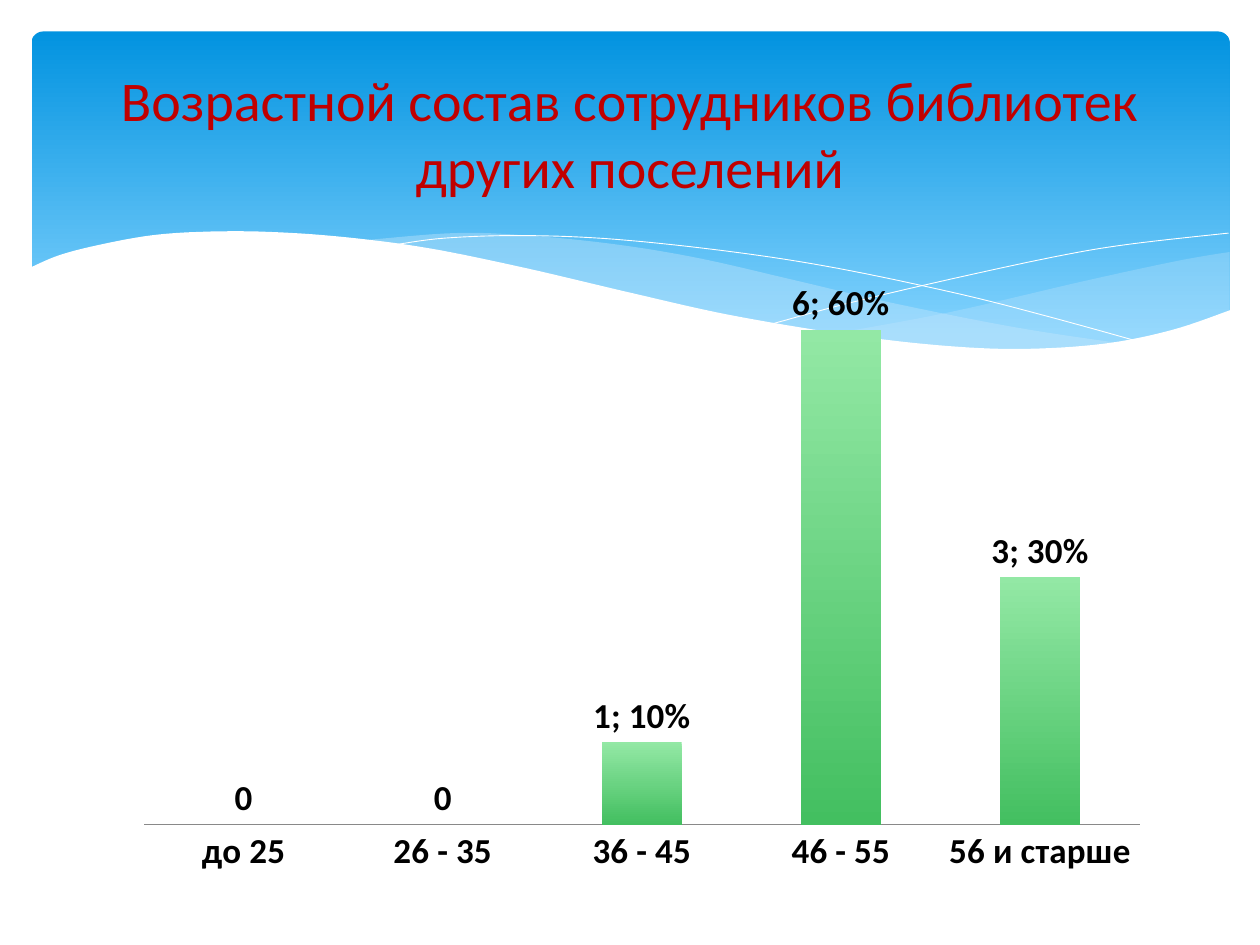
from itertools import chain
from lxml import etree
from pptx import Presentation
from pptx import util as u
from pptx.chart.data import CategoryChartData
from pptx.dml.color import RGBColor
from pptx.enum import chart as charts, shapes, text
from pptx.oxml import parse_xml
from pptx.oxml.ns import nsdecls, qn

THEME = dict(
    font="Calibri", title="C00000", ink="000000", axis="898989", paper="FFFFFF", mist="C6E7FC",
    sky=("0293E0", "83D3FE"), bars=("93E8A5", "43BF60"),
    title_size=32, label_size=20, chart_size=18, hairline=0.5,
)

deck = Presentation()
deck.slide_width, deck.slide_height = u.Inches(10), u.Inches(7.5)
col, row = deck.slide_width / 10, deck.slide_height / 7.5
slide = deck.slides.add_slide(deck.slide_layouts[6])


def write(frame, content, size, color, bold=False):
    paragraph = frame.paragraphs[0]
    paragraph.alignment = text.PP_ALIGN.CENTER
    run = paragraph.add_run()
    run.text = content
    run.font.name, run.font.size, run.font.bold = THEME["font"], u.Pt(size), bold
    run.font.color.rgb = RGBColor.from_string(color)


def wave(*edges, fill=None, alpha=100):
    outline = []
    for edge in edges:
        ends = [edge[0], *edge, edge[-1]]
        for a, b, c, d in zip(ends, ends[1:], ends[2:], ends[3:]):
            for t in (step / 8 for step in range(8)):
                outline.append([
                    b[i] + t * (c[i] - a[i]) / 2
                    + t ** 2 * (2 * a[i] - 5 * b[i] + 4 * c[i] - d[i]) / 2
                    + t ** 3 * (3 * b[i] - a[i] - 3 * c[i] + d[i]) / 2
                    for i in (0, 1)])
        outline.append(edge[-1])
    points = [(round(x * col), round(y * row)) for x, y in outline]
    builder = slide.shapes.build_freeform(*points[0])
    builder.add_line_segments(points[1:], close=fill is not None)
    ribbon = builder.convert_to_shape()
    ribbon.shadow.inherit = False
    if fill:
        ribbon.fill.solid()
        ribbon.fill.fore_color.rgb = RGBColor.from_string(fill)
        tint = ribbon._element.spPr.find(qn("a:solidFill")).find(qn("a:srgbClr"))
        etree.SubElement(tint, qn("a:alpha")).set("val", str(alpha * 1000))
        ribbon.line.fill.background()
    else:
        ribbon.fill.background()
        ribbon.line.color.rgb = RGBColor.from_string(THEME["paper"])
        ribbon.line.width = u.Pt(THEME["hairline"])


banner = slide.shapes.add_shape(
    shapes.MSO_SHAPE.ROUNDED_RECTANGLE,
    round(0.25 * col), round(0.25 * row), round(9.51 * col), round(2.7 * row))
banner.adjustments[0] = 0.034
banner.shadow.inherit = False
banner.line.fill.background()

wave([(9.76, 2), (9.35, 2.07), (8.61, 2.23), (7.53, 2.48), (6.61, 2.65)],
     [(6.61, 2.65), (7.19, 2.72), (7.69, 2.77), (8.14, 2.78), (8.63, 2.75), (9.05, 2.69),
      (9.42, 2.59), (9.76, 2.47)],
     fill=THEME["mist"], alpha=29)
wave([(8.93, 2.73), (8.07, 2.6), (7.06, 2.4), (6.29, 2.22), (5.55, 2.05), (4.89, 1.94),
      (4.2, 1.87), (3.61, 1.85), (2.86, 1.91)],
     [(2.86, 1.91), (3.62, 2.03), (4.49, 2.22), (5.3, 2.4), (6.01, 2.55), (6.65, 2.66),
      (7.22, 2.74), (7.73, 2.77), (8.18, 2.78), (8.57, 2.77), (8.93, 2.73)],
     fill=THEME["mist"], alpha=40)
wave([(3.09, 1.95), (3.53, 1.89), (4.16, 1.87), (4.89, 1.9), (5.82, 2), (6.65, 2.13),
      (7.6, 2.33), (8.31, 2.51), (9.07, 2.72)])
wave([(6.13, 2.57), (6.72, 2.41), (7.48, 2.23), (8.36, 2.04), (8.95, 1.94), (9.75, 1.85)])
wave([(9.77, 2.46), (9.3, 2.62), (8.75, 2.73), (8.09, 2.77), (7.44, 2.74), (6.68, 2.65),
      (5.79, 2.5), (5.03, 2.33), (4.18, 2.13), (3.4, 1.97), (2.71, 1.88), (2.11, 1.84),
      (1.61, 1.84), (1.19, 1.87), (0.76, 1.95), (0.46, 2.03), (0.23, 2.13)],
     [(0.23, 3.29), (9.77, 3.29)],
     fill=THEME["paper"])

ages = CategoryChartData()
ages.categories = ["до 25", "26 - 35", "36 - 45", "46 - 55", "56 и старше"]
ages.add_series("Series 1", (0, 0, 1, 6, 3))
staff = slide.shapes.add_chart(
    charts.XL_CHART_TYPE.COLUMN_CLUSTERED,
    round(0.98 * col), round(1.86 * row), round(8.23 * col), round(5.15 * row), ages).chart
staff.has_legend = staff.has_title = False
staff.font.name, staff.font.size = THEME["font"], u.Pt(THEME["chart_size"])
staff.font.color.rgb = RGBColor.from_string(THEME["ink"])

plot_area = staff._chartSpace.chart.plotArea
for old in plot_area.findall(qn("c:layout")):
    plot_area.remove(old)
plot_area.insert(0, parse_xml(
    f'<c:layout {nsdecls("c")}><c:manualLayout><c:layoutTarget val="inner"/>'
    '<c:xMode val="edge"/><c:yMode val="edge"/><c:x val="0.02"/><c:y val="0.02"/>'
    '<c:w val="0.96"/><c:h val="0.89"/></c:manualLayout></c:layout>'))

age_axis, count_axis = staff.category_axis, staff.value_axis
age_axis.major_tick_mark = charts.XL_TICK_MARK.NONE
age_axis.tick_labels.font.size = u.Pt(THEME["label_size"])
age_axis.tick_labels.font.bold = True
age_axis.format.line.color.rgb = RGBColor.from_string(THEME["axis"])
count_axis.minimum_scale, count_axis.maximum_scale = 0, 7
count_axis.has_major_gridlines = False
count_axis.visible = False

columns = staff.plots[0]
columns.gap_width, columns.overlap, columns.vary_by_categories = 150, -25, False
counts = columns.series[0]
counts.invert_if_negative = False
labels = counts.data_labels
labels.show_value = True
labels.position = charts.XL_LABEL_POSITION.OUTSIDE_END
labels.font.size, labels.font.bold = u.Pt(THEME["label_size"]), True
for index, share in enumerate(("1; 10%", "6; 60%", "3; 30%"), start=2):
    label = counts.points[index].data_label
    write(label.text_frame, share, size=THEME["label_size"], color=THEME["ink"], bold=True)
    label.position = charts.XL_LABEL_POSITION.OUTSIDE_END

for fill, tones, last in ((banner.fill, THEME["sky"], 0.9), (counts.format.fill, THEME["bars"], 1)):
    fill.gradient()
    fill.gradient_angle = 270
    for stop, tone, place in zip(fill.gradient_stops, tones, (0, last)):
        stop.color.rgb = RGBColor.from_string(tone)
        stop.position = place

heading = slide.shapes.add_textbox(
    round(0.5 * col), round(0.37 * row), round(9 * col), round(1.37 * row)).text_frame
heading.word_wrap = True
heading.vertical_anchor = text.MSO_ANCHOR.MIDDLE
write(heading, "Возрастной состав сотрудников библиотек других поселений",
      size=THEME["title_size"], color=THEME["title"])

deck.save("out.pptx")
